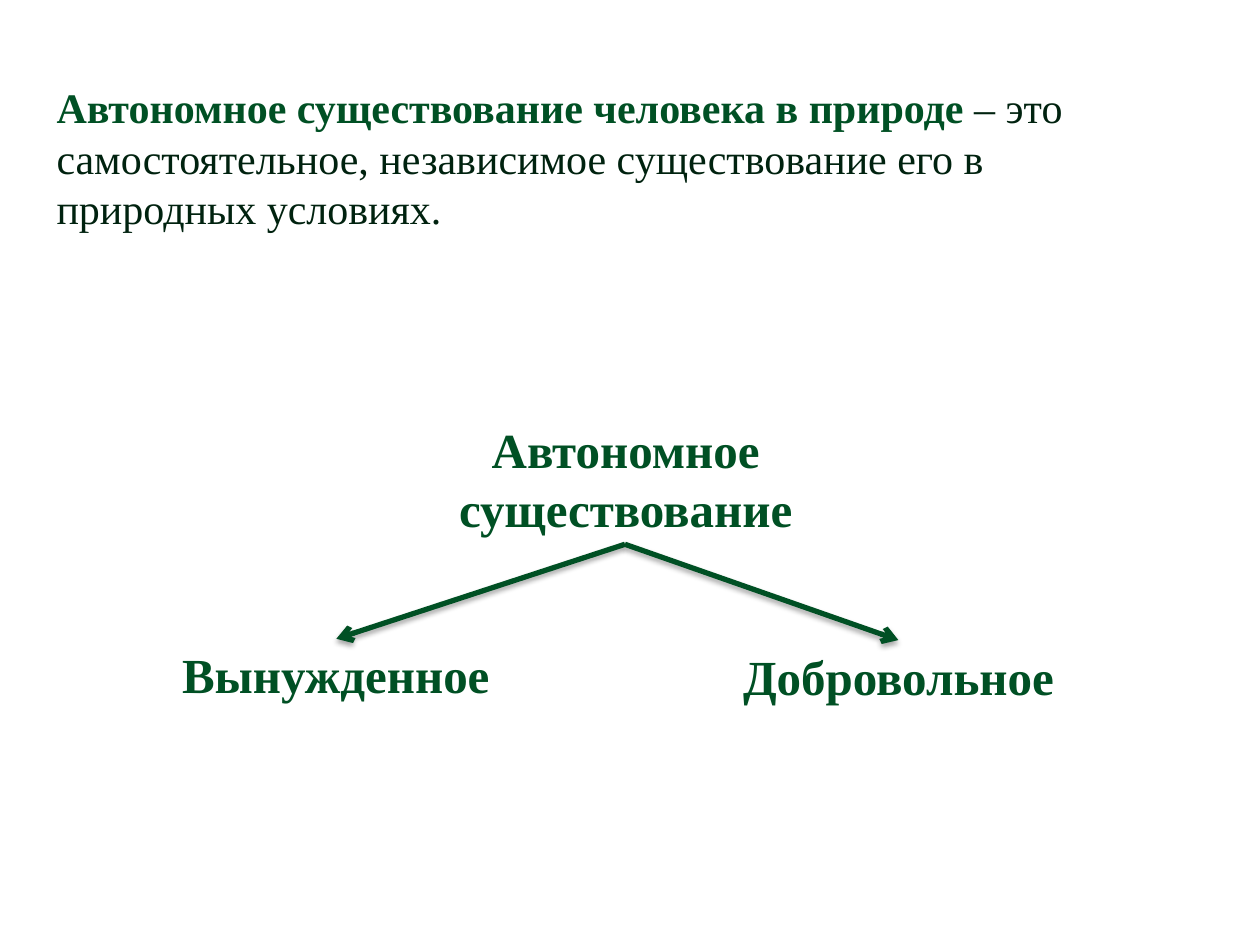
import pptx
import pptx.util
import pptx.dml.color
import pptx.enum.shapes
import pptx.enum.text
import pptx.oxml
import pptx.oxml.ns
from pptx.util import Inches

GREEN = pptx.dml.color.RGBColor(0x00, 0x50, 0x24)
DARK_GREEN = pptx.dml.color.RGBColor(0x00, 0x22, 0x0F)
WHITE = pptx.dml.color.RGBColor(0xFF, 0xFF, 0xFF)

SHADOW = (
    f'<a:effectLst {pptx.oxml.ns.nsdecls("a")}>'
    '<a:outerShdw blurRad="39370" dist="22860" dir="5400000" rotWithShape="0">'
    '<a:srgbClr val="000000"><a:alpha val="35000"/></a:srgbClr>'
    '</a:outerShdw></a:effectLst>'
)
ARROWHEAD = f'<a:tailEnd {pptx.oxml.ns.nsdecls("a")} type="arrow"/>'

deck = pptx.Presentation()
deck.slide_width = Inches(10)
deck.slide_height = Inches(7.5)
slide = deck.slides.add_slide(deck.slide_layouts[6])


def add_text(left, top, width, height, text, size, alignment):
    box = slide.shapes.add_textbox(
        Inches(left), Inches(top), Inches(width), Inches(height))
    box.fill.solid()
    box.fill.fore_color.rgb = WHITE
    box.text_frame.word_wrap = True
    para = box.text_frame.paragraphs[0]
    para.alignment = alignment
    span = para.add_run()
    span.text = text
    para.font.name = "Times New Roman"
    para.font.size = pptx.util.Pt(size)
    for font in (para.font, span.font):
        font.bold = True
        font.color.rgb = GREEN
    span.font.name = "Times New Roman"
    span.font.size = pptx.util.Pt(size)
    return para


# Definition: bold term, then its plain explanation
definition = add_text(0.35, 0.6, 9.21, 1.62,
                      "Автономное существование человека в природе ",
                      24, pptx.enum.text.PP_ALIGN.LEFT)
explanation = definition.add_run()
explanation.text = ("– это самостоятельное, независимое существование его "
                    "в природных условиях.")
explanation.font.name = "Times New Roman"
explanation.font.size = pptx.util.Pt(24)
explanation.font.bold = False
explanation.font.color.rgb = DARK_GREEN

# Scheme: the concept and its two kinds
for left, top, width, height, label in (
    (2.64, 3.28, 4.65, 1.04, "Автономное существование"),
    (1.21, 5.07, 2.91, 0.57, "Вынужденное"),
    (5.79, 5.08, 2.68, 0.57, "Добровольное"),
):
    add_text(left, top, width, height, label, 28,
             pptx.enum.text.PP_ALIGN.CENTER)

# Arrows from the concept to each kind
for end_x, end_y in ((2.67, 5.07), (7.13, 5.08)):
    arrow = slide.shapes.add_connector(
        pptx.enum.shapes.MSO_CONNECTOR.STRAIGHT,
        Inches(4.96), Inches(4.32), Inches(end_x), Inches(end_y))
    arrow.line.color.rgb = GREEN
    arrow.line.width = pptx.util.Pt(3)
    arrow.line._get_or_add_ln().append(pptx.oxml.parse_xml(ARROWHEAD))
    arrow._element.spPr.append(pptx.oxml.parse_xml(SHADOW))

deck.save("out.pptx")
